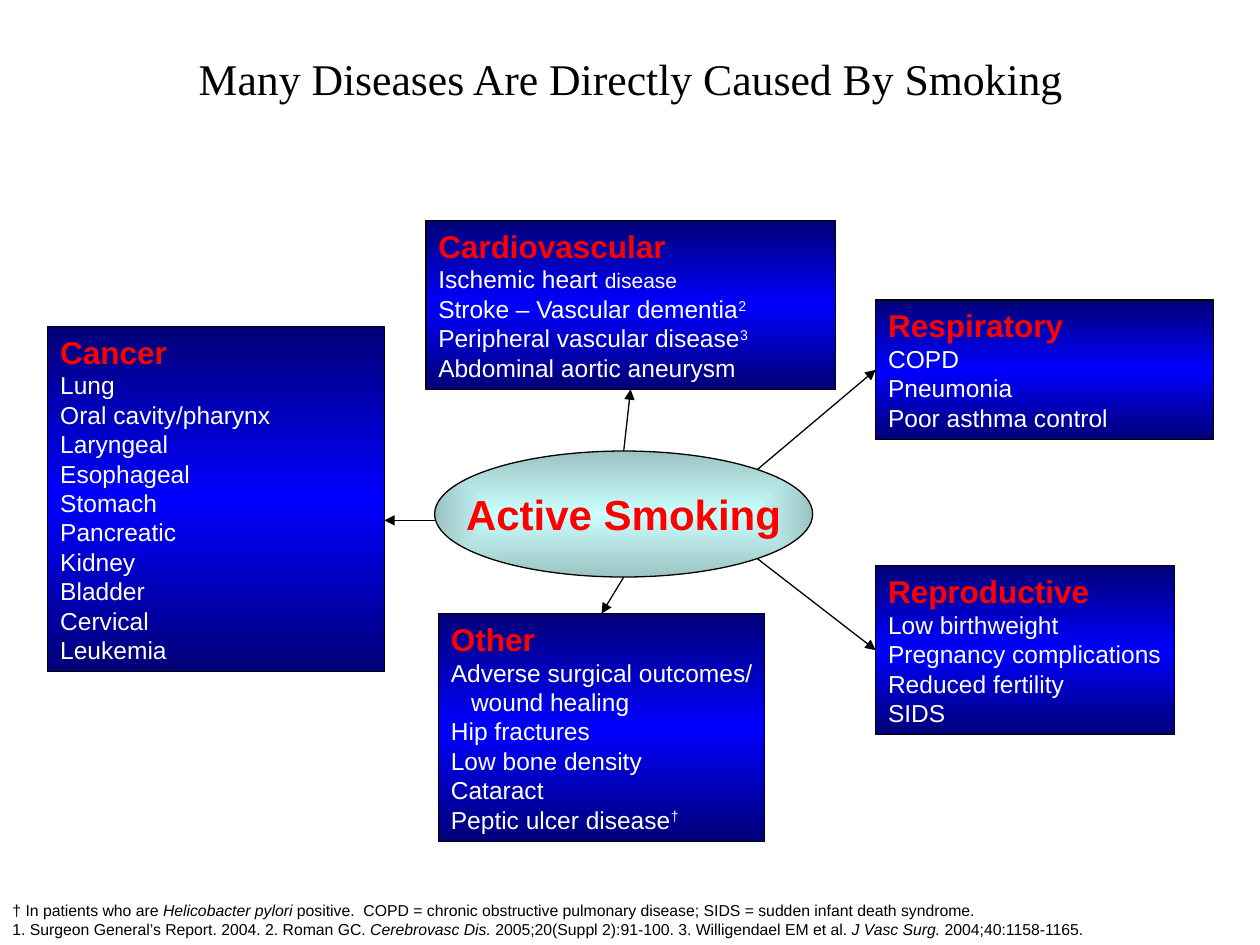
from dataclasses import dataclass
from math import cos, radians, sin

from lxml.etree import SubElement
from pptx import Presentation
from pptx.dml.color import RGBColor
from pptx.enum.shapes import MSO_CONNECTOR as CONN, MSO_SHAPE as SHAPE
from pptx.enum.text import MSO_ANCHOR as ANCHOR, PP_ALIGN as ALIGN
from pptx.oxml import parse_xml
from pptx.oxml.ns import nsdecls, qn
from pptx.util import Inches, Pt


@dataclass(frozen=True)
class Theme:
    sans: str = "Arial"
    serif: str = "Times New Roman"
    ink: str = "000000"
    accent: str = "FF0000"
    light: str = "FFFFFF"
    box_edge: str = "000076"
    box_mid: str = "0000FF"
    hub_mid: str = "CCFFFF"
    hub_edge: str = "9CC3C3"
    title: int = 25
    hub: int = 24
    heading: int = 18
    body: int = 14
    small: int = 12
    note: int = 9
    line: float = 0.75


THEME = Theme()
WIDTH, HEIGHT = Inches(10), Inches(7.5)
UNIT = WIDTH / 100
LINEAR = '<a:lin ang="5400000" scaled="1"/>'
RADIAL = '<a:path path="shape"><a:fillToRect l="50000" t="50000" r="50000" b="50000"/></a:path>'

HUB = (34.5, 35.8, 30, 10)
SIDES = {"top": 0, "left": 1}
BOTTOM = 2

GROUPS = [
    ("Cancer", (3.8, 25.9, 26.7, 27.4), True, [
        "Lung", "Oral cavity/pharynx", "Laryngeal", "Esophageal", "Stomach",
        "Pancreatic", "Kidney", "Bladder", "Cervical", "Leukemia"]),
    ("Cardiovascular", (33.8, 17.5, 32.5, 13.4), True, [
        [("Ischemic heart ", ""), ("disease", "small")],
        [("Stroke – Vascular dementia", ""), ("2", "sup")],
        [("Peripheral vascular disease", ""), ("3", "sup")],
        "Abdominal aortic aneurysm"]),
    ("Respiratory", (69.5, 23.8, 26.8, 11.1), True, [
        "COPD", "Pneumonia", "Poor asthma control"]),
    ("Reproductive", (69.5, 44.9, 23.7, 13.4), False, [
        "Low birthweight", "Pregnancy complications", "Reduced fertility", "SIDS"]),
    ("Other", (34.8, 48.7, 25.9, 18.1), False, [
        "Adverse surgical outcomes/\vwound healing", "Hip fractures",
        "Low bone density", "Cataract",
        [("Peptic ulcer disease", ""), ("†", "sup")]]),
]

SPOKES = [
    ("Cardiovascular", 90, BOTTOM),
    ("Other", 270, SIDES["top"]),
    ("Respiratory", 45, SIDES["left"]),
    ("Reproductive", 315, SIDES["left"]),
]

NOTES = [
    ("† In patients who are ", ""), ("Helicobacter pylori", "italic"),
    (" positive.  COPD = chronic obstructive pulmonary disease; "
     "SIDS = sudden infant death syndrome.\v"
     "1. Surgeon General’s Report. 2004. 2. Roman GC. ", ""),
    ("Cerebrovasc Dis. ", "italic"),
    ("2005;20(Suppl 2):91-100. 3. Willigendael EM et al. ", ""),
    ("J Vasc Surg. ", "italic"), ("2004;40:1158-1165.", ""),
]


def grid(*cells):
    return [round(c * UNIT) for c in cells]


def set_font(font, size, color, name=THEME.sans, bold=False):
    font.name, font.size, font.bold = name, Pt(size), bold
    font.color.rgb = RGBColor.from_string(color)


def write(p, content, size, color, align=ALIGN.LEFT, **style):
    p.alignment = align
    set_font(p.font, size, color, **style)
    for text, kind in [(content, "")] if isinstance(content, str) else content:
        for i, part in enumerate(text.split("\v")):
            if i:
                p.add_line_break()
            r = p.add_run()
            r.text = part
            if kind == "italic":
                r.font.italic = True
            elif kind == "small":
                r.font.size = Pt(THEME.small)
            elif kind == "sup":
                r.font._element.set("baseline", "30000")


def hang(p, indent):
    pPr = p._p.get_or_add_pPr()
    pPr.set("marL", str(indent))
    pPr.set("indent", str(-indent))


def gradient(s, colors, direction):
    last = len(colors) - 1
    stops = "".join(
        f'<a:gs pos="{100000 * i // last}"><a:srgbClr val="{c}"/></a:gs>'
        for i, c in enumerate(colors))
    s._element.spPr.find(qn("a:prstGeom")).addnext(parse_xml(
        f'<a:gradFill {nsdecls("a")} rotWithShape="1">'
        f'<a:gsLst>{stops}</a:gsLst>{direction}</a:gradFill>'))


def outline(s):
    s.line.color.rgb = RGBColor.from_string(THEME.ink)
    s.line.width = Pt(THEME.line)


def add_panel(slide, kind, cells, colors, direction, anchor, wrap):
    s = slide.shapes.add_shape(kind, *grid(*cells))
    s.shadow.inherit = False
    gradient(s, colors, direction)
    outline(s)
    s.text_frame.word_wrap = wrap
    s.text_frame.vertical_anchor = anchor
    return s


def add_group(slide, heading, cells, wrap, items):
    s = add_panel(slide, SHAPE.RECTANGLE, cells,
                  (THEME.box_edge, THEME.box_mid, THEME.box_edge), LINEAR, ANCHOR.TOP, wrap)
    tf = s.text_frame
    write(tf.paragraphs[0], heading, THEME.heading, THEME.accent, bold=True)
    for item in items:
        p = tf.add_paragraph()
        write(p, item, THEME.body, THEME.light)
        if "\v" in item:
            hang(p, Inches(0.16))
    return s


def add_hub(slide):
    s = add_panel(slide, SHAPE.OVAL, HUB, (THEME.hub_mid, THEME.hub_edge),
                  RADIAL, ANCHOR.MIDDLE, False)
    write(s.text_frame.paragraphs[0], "Active Smoking", THEME.hub, THEME.accent,
          ALIGN.CENTER, bold=True)


def hub_point(angle):
    x, y, w, h = HUB
    a = radians(angle)
    return x + w / 2 * (1 + cos(a)), y + h / 2 * (1 - sin(a))


def add_arrow(slide, start, end):
    c = slide.shapes.add_connector(CONN.STRAIGHT, *grid(*start, *end))
    outline(c)
    SubElement(c.line._get_or_add_ln(), qn("a:tailEnd"), type="triangle")
    SubElement(c._element.spPr, qn("a:effectLst"))
    return c


def add_notes(slide):
    tf = slide.shapes.add_textbox(*grid(0, 71, 99.2, 4)).text_frame
    tf.word_wrap = True
    write(tf.paragraphs[0], NOTES, THEME.note, THEME.ink)


def set_title(slide, text):
    s = slide.shapes.title
    s.left, s.top, s.width, s.height = grid(2, 2.5, 96.1, 7.4)
    s.text_frame.vertical_anchor = ANCHOR.MIDDLE
    write(s.text_frame.paragraphs[0], text, THEME.title, THEME.ink,
          ALIGN.CENTER, name=THEME.serif)


def main():
    prs = Presentation()
    prs.slide_width, prs.slide_height = WIDTH, HEIGHT
    slide = prs.slides.add_slide(prs.slide_layouts[5])
    set_title(slide, "Many Diseases Are Directly Caused By Smoking")
    add_notes(slide)
    boxes = {group[0]: add_group(slide, *group) for group in GROUPS}
    add_hub(slide)
    for name, angle, side in SPOKES:
        start = hub_point(angle)
        add_arrow(slide, start, start).end_connect(boxes[name], side)
    add_arrow(slide, (34.6, 41.3), (30.5, 41.3))
    prs.save("out.pptx")


if __name__ == "__main__":
    main()
